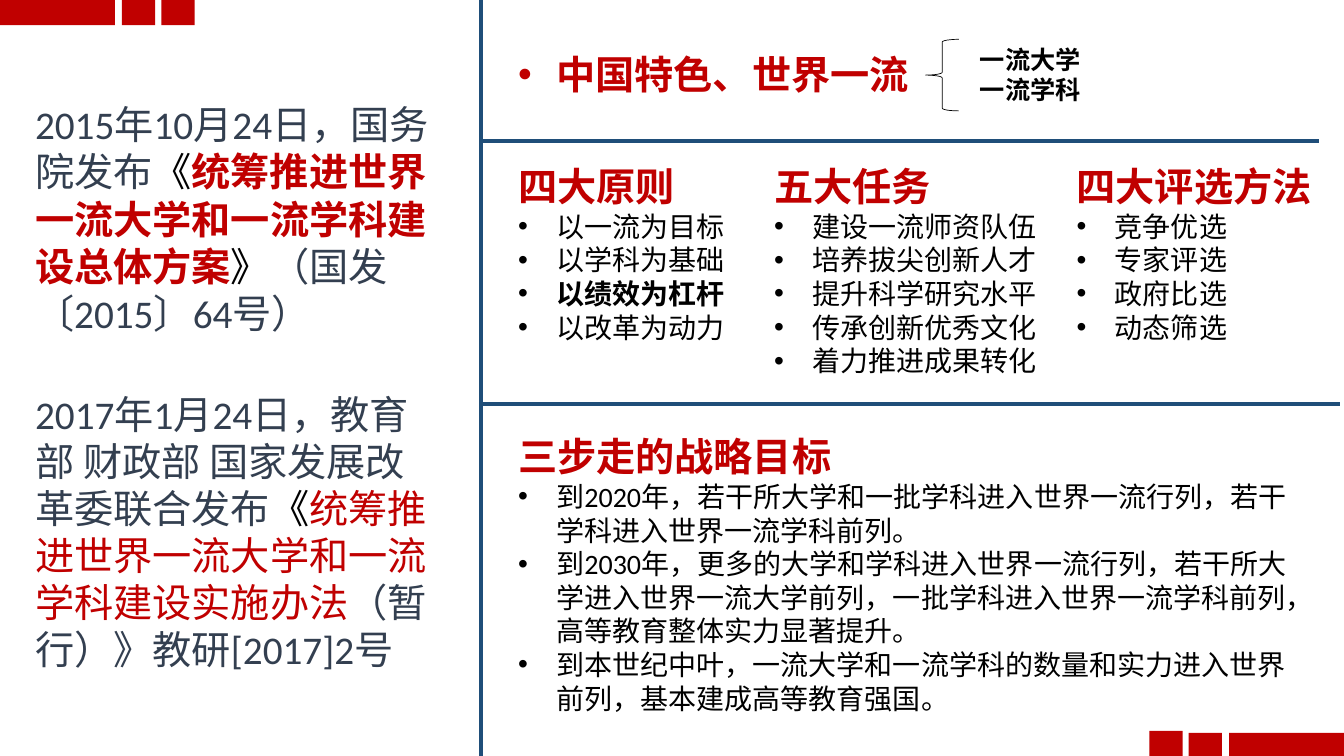
from lxml.etree import SubElement
from pptx import Presentation
from pptx.dml.color import RGBColor
from pptx.enum.lang import MSO_LANGUAGE_ID
from pptx.enum.shapes import MSO_CONNECTOR, MSO_SHAPE
from pptx.enum.text import MSO_AUTO_SIZE
from pptx.oxml.ns import qn
from pptx.util import Inches, Pt

RED = RGBColor(0xC0, 0x00, 0x00)
BLUE = RGBColor(0x1F, 0x4E, 0x79)
SLATE = RGBColor(0x33, 0x3F, 0x50)
BLACK = RGBColor(0x00, 0x00, 0x00)

HEADING = {"size": Pt(28), "bold": True, "color": RED}
ITEM = {"size": Pt(20), "bold": False, "color": BLACK}
KEY_ITEM = {**ITEM, "bold": True}
CATEGORY = {"size": Pt(18), "bold": True, "color": BLACK}
NOTICE = {"size": Pt(28), "bold": False, "color": SLATE}
NOTICE_MARK = {**NOTICE, "color": BLACK}
NOTICE_TITLE = {**NOTICE, "color": RED}

INDENT = Inches(0.38)
COLUMN_TOP = 1.56
KEY_PRINCIPLE = "以绩效为杠杆"

CORNER_BLOCKS = [
    (0, 0, 1.14), (1.21, 0, 0.33), (1.6, 0, 0.33),
    (11.4, 7.25, 0.33), (11.79, 7.27, 0.33), (12.19, 7.27, 1.14),
]
DIVIDERS = [
    (4.77, 1.4, 13.08, 1.4),
    (4.78, 4.01, 13.29, 4.01),
    (4.77, 0, 4.77, 7.5),
]
SECTIONS = [
    ((5.04, COLUMN_TOP, 3.08, 1.92), "四大原则",
     ["以一流为目标", "以学科为基础", KEY_PRINCIPLE, "以改革为动力"]),
    ((7.58, COLUMN_TOP, 3.24, 2.26), "五大任务",
     ["建设一流师资队伍", "培养拔尖创新人才", "提升科学研究水平",
      "传承创新优秀文化", "着力推进成果转化"]),
    ((10.58, COLUMN_TOP, 2.64, 1.92), "四大评选方法",
     ["竞争优选", "专家评选", "政府比选", "动态筛选"]),
    ((5.04, 4.24, 7.83, 2.93), "三步走的战略目标",
     ["到2020年，若干所大学和一批学科进入世界一流行列，若干学科进入世界一流学科前列。",
      "到2030年，更多的大学和学科进入世界一流行列，若干所大学进入世界一流大学前列，"
      "一批学科进入世界一流学科前列，高等教育整体实力显著提升。",
      "到本世纪中叶，一流大学和一流学科的数量和实力进入世界前列，基本建成高等教育强国。"]),
]
NOTICES = [
    ((0.25, 0.95, 4.2, 2.46), [
        ("2015年10月24日，国务院发布", NOTICE),
        ("《", NOTICE_MARK),
        ("统筹推进世界一流大学和一流学科建设总体方案", HEADING),
        ("》", NOTICE_MARK),
        ("（国发〔2015〕64号）", NOTICE),
    ]),
    ((0.25, 3.82, 4.18, 2.93), [
        ("2017年1月24日，教育部 财政部 国家发展改革委联合发布", NOTICE),
        ("《", NOTICE_MARK),
        ("统筹推进世界一流大学和一流学科建设实施办法", NOTICE_TITLE),
        ("（暂行）》教研[2017]2号", NOTICE),
    ]),
]


def add_run(paragraph, text, style):
    run = paragraph.add_run()
    run.text = text
    run.font.color.rgb = style["color"]
    settings = {"name": "Calibri", "size": style["size"], "bold": style["bold"],
                "language_id": MSO_LANGUAGE_ID.SIMPLIFIED_CHINESE}
    for attribute, value in settings.items():
        setattr(run.font, attribute, value)


def add_bullet(paragraph):
    properties = paragraph._p.get_or_add_pPr()
    properties.set("marL", str(INDENT))
    properties.set("indent", str(-INDENT))
    SubElement(properties, qn("a:buFont"), typeface="Arial")
    SubElement(properties, qn("a:buChar"), char="•")


def add_text(slide, box, paragraphs, wrap=True):
    frame = slide.shapes.add_textbox(*map(Inches, box)).text_frame
    frame.word_wrap = wrap
    frame.auto_size = MSO_AUTO_SIZE.SHAPE_TO_FIT_TEXT
    for index, (runs, bulleted) in enumerate(paragraphs):
        paragraph = frame.add_paragraph() if index else frame.paragraphs[0]
        if bulleted:
            add_bullet(paragraph)
        for text, style in runs:
            add_run(paragraph, text, style)


def add_section(slide, box, heading, items):
    paragraphs = [([(heading, HEADING)], False)]
    for item in items:
        style = KEY_ITEM if item == KEY_PRINCIPLE else ITEM
        paragraphs.append(([(item, style)], True))
    add_text(slide, box, paragraphs)


def add_corner_block(slide, left, top, width):
    block = slide.shapes.add_shape(
        MSO_SHAPE.RECTANGLE, *map(Inches, (left, top, width, 0.25)))
    block.shadow.inherit = False
    block.fill.solid()
    block.fill.fore_color.rgb = RED
    block.line.fill.background()


def add_divider(slide, ends):
    divider = slide.shapes.add_connector(MSO_CONNECTOR.STRAIGHT, *map(Inches, ends))
    divider.line.color.rgb = BLUE
    divider.line.width = Pt(3)
    SubElement(divider._element.spPr, qn("a:effectLst"))


def add_brace(slide, box):
    brace = slide.shapes.add_shape(MSO_SHAPE.LEFT_BRACE, *map(Inches, box))
    brace.shadow.inherit = False
    brace.fill.background()
    brace.line.color.rgb = BLACK
    brace.line.width = Pt(0.5)


def main():
    presentation = Presentation()
    presentation.slide_width = Inches(13.33)
    presentation.slide_height = Inches(7.5)
    slide = presentation.slides.add_slide(presentation.slide_layouts[6])

    for block in CORNER_BLOCKS:
        add_corner_block(slide, *block)
    for box, runs in NOTICES:
        add_text(slide, box, [(runs, False)])
    add_text(slide, (5.04, 0.45, 4.14, 0.57),
             [([("中国特色、世界一流", HEADING)], True)])
    add_brace(slide, (9.18, 0.39, 0.33, 0.71))
    add_text(slide, (9.62, 0.39, 1.21, 0.71),
             [([(name, CATEGORY)], False) for name in ("一流大学", "一流学科")],
             wrap=False)
    for section in SECTIONS:
        add_section(slide, *section)
    for ends in DIVIDERS:
        add_divider(slide, ends)

    presentation.save("out.pptx")


if __name__ == "__main__":
    main()
